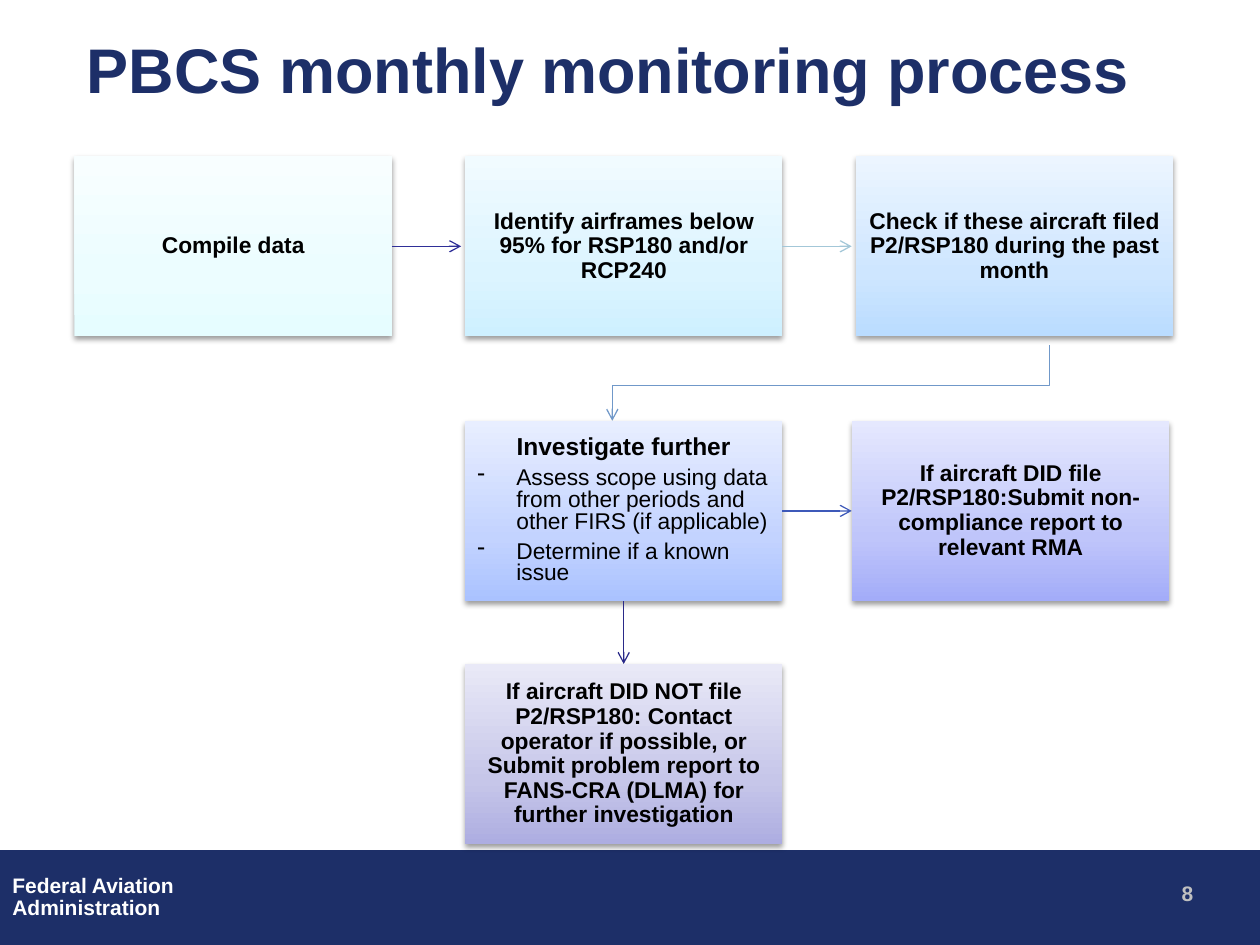
from lxml import etree
from pptx import Presentation
from pptx.dml.color import RGBColor
from pptx.enum.shapes import MSO_CONNECTOR, MSO_SHAPE
from pptx.enum.text import MSO_ANCHOR, MSO_AUTO_SIZE, PP_ALIGN
from pptx.oxml import parse_xml
from pptx.oxml.ns import nsdecls, qn
from pptx.util import Inches, Pt

RECTANGLE, STRAIGHT = MSO_SHAPE.RECTANGLE, MSO_CONNECTOR.STRAIGHT
LEFT, CENTER = PP_ALIGN.LEFT, PP_ALIGN.CENTER
MIDDLE, NO_FIT = MSO_ANCHOR.MIDDLE, MSO_AUTO_SIZE.NONE
BOTTOM_SIDE, LEFT_SIDE, RIGHT_SIDE, TOP_SIDE = 2, 1, 3, 0

NAVY = RGBColor(0x1D, 0x2F, 0x68)
WHITE = RGBColor(0xFF, 0xFF, 0xFF)
BLACK = RGBColor(0, 0, 0)
SILVER = RGBColor(0xC0, 0xC0, 0xC0)
COMPILE_ARROW = RGBColor(0x2F, 0x2F, 0x98)
IDENTIFY_ARROW = RGBColor(0xA3, 0xC7, 0xD8)
CHECK_ARROW = RGBColor(0x70, 0x98, 0xC9)
FILED_ARROW = RGBColor(0x3D, 0x59, 0xB9)
NOT_FILED_ARROW = RGBColor(0x2A, 0x2A, 0x89)

BOX_WIDTH, BOX_HEIGHT = 2.52, 1.43
ROW_TOPS = (1.24, 3.34, 5.27)
MIDDLE_COLUMN = 3.69
STEPS = {
    "compile": (0.59, ROW_TOPS[0], ("E6FDFF", "ECFDFF", "F8FEFF"), "Compile data"),
    "identify": (MIDDLE_COLUMN, ROW_TOPS[0], ("CEF0FF", "DCF4FF", "F1FBFF"),
                 "Identify airframes below 95% for RSP180 and/or RCP240"),
    "check": (6.79, ROW_TOPS[0], ("BADCFF", "CEE6FF", "ECF5FF"),
              "Check if these aircraft filed P2/RSP180 during the past month"),
    "investigate": (MIDDLE_COLUMN, ROW_TOPS[1], ("AAC2FF", "C3D3FF", "E8EEFF"), None),
    "filed": (6.76, ROW_TOPS[1], ("A3ACF9", "BFC5FA", "E5E8FE"),
              "If aircraft DID file P2/RSP180:Submit non-compliance report to relevant RMA"),
    "not filed": (MIDDLE_COLUMN, ROW_TOPS[2], ("ADADE1", "C6C6E9", "E9E9F7"),
                  "If aircraft DID NOT file P2/RSP180: Contact operator if possible, or "
                  "Submit problem report to FANS-CRA (DLMA) for further investigation"),
}
INVESTIGATION_TASKS = (
    "Assess scope using data from other periods and other FIRS (if applicable)",
    "Determine if a known issue",
)


def write(para, text, size, color, bold=True, align=LEFT, spacing=1.0):
    """Fill one paragraph with a single formatted run."""
    para.alignment = align
    para.line_spacing = spacing
    span = para.add_run()
    span.text = text
    font = span.font
    font.name, font.size, font.bold = "Arial", Pt(size), bold
    font.color.rgb = color


def add_bullet(para):
    """Give a paragraph a hanging dash."""
    properties = para._p.get_or_add_pPr()
    properties.set("marL", str(Inches(0.31)))
    properties.set("indent", str(-Inches(0.31)))
    etree.SubElement(properties, qn("a:buChar")).set("char", "-")


def fill_gradient(box, colors):
    """Shade a box upwards from its darkest colour."""
    box.fill.gradient()
    box.fill.gradient_angle = 90
    stops = box._element.spPr.find(qn("a:gradFill")).find(qn("a:gsLst"))
    for stop in list(stops):
        stops.remove(stop)
    for position, color in zip((0, 35000, 100000), colors):
        stops.append(parse_xml(
            f'<a:gs {nsdecls("a")} pos="{position}"><a:srgbClr val="{color}"/></a:gs>'))


def add_step(page, left, top, colors, text):
    """Place one shaded process box, with its text if it is a plain step."""
    box = page.shapes.add_shape(RECTANGLE, Inches(left), Inches(top),
                                Inches(BOX_WIDTH), Inches(BOX_HEIGHT))
    fill_gradient(box, colors)
    box.line.fill.background()
    box._element.spPr.append(parse_xml(
        f'<a:effectLst {nsdecls("a")}><a:outerShdw blurRad="40000" dist="20000" '
        'dir="5400000" rotWithShape="0"><a:srgbClr val="000000">'
        '<a:alpha val="38000"/></a:srgbClr></a:outerShdw></a:effectLst>'))
    frame = box.text_frame
    frame.word_wrap, frame.vertical_anchor = True, MIDDLE
    frame.margin_left = frame.margin_right = Inches(0.1)
    frame.margin_top = frame.margin_bottom = Inches(0.1)
    if text:
        write(frame.paragraphs[0], text, 13, BLACK, align=CENTER, spacing=0.9)
    return box


def add_investigation(box):
    """Write the heading and tasks of the investigation box."""
    frame = box.text_frame
    write(frame.paragraphs[0], "Investigate further", 14, BLACK, align=CENTER, spacing=0.8)
    for task in INVESTIGATION_TASKS:
        para = frame.add_paragraph()
        add_bullet(para)
        write(para, task, 13, BLACK, bold=False, spacing=0.8)
    for para in frame.paragraphs:
        para.space_after = Pt(4.55)


def style_arrow(arrow, color):
    """Format a line with an open arrowhead at its end."""
    arrow.line.color.rgb = color
    arrow.line.width = Pt(0.75)
    etree.SubElement(arrow.line._get_or_add_ln(), qn("a:tailEnd")).set("type", "arrow")


def add_arrow(page, start, start_side, end, color, target=None, target_side=None):
    """Draw a straight arrow from a box, joined to a target box if given."""
    origin = Inches(0)
    arrow = page.shapes.add_connector(STRAIGHT, origin, origin, *map(Inches, end))
    arrow.begin_connect(start, start_side)
    if target is not None:
        arrow.end_connect(target, target_side)
    else:
        arrow.end_y = arrow.begin_y
    style_arrow(arrow, color)
    etree.SubElement(arrow._element.spPr, qn("a:effectLst"))


def add_bent_arrow(page, points, color):
    """Draw an arrow that turns at each inner point."""
    corners = [(Inches(x), Inches(y)) for x, y in points]
    builder = page.shapes.build_freeform(*corners[0])
    builder.add_line_segments(corners[1:], close=False)
    arrow = builder.convert_to_shape()
    arrow.fill.background()
    style_arrow(arrow, color)
    arrow.shadow.inherit = False


def add_title(page, left, top, width, height):
    """Place and format the title."""
    title = page.shapes.title
    title.left, title.top = Inches(left), Inches(top)
    title.width, title.height = Inches(width), Inches(height)
    frame = title.text_frame
    frame.auto_size, frame.vertical_anchor = NO_FIT, MIDDLE
    write(frame.paragraphs[0], "PBCS monthly monitoring process", 36, NAVY)


def add_footer(page, top, height):
    """Draw the footer band with the agency name and page number."""
    band = page.shapes.add_shape(RECTANGLE, Inches(0), Inches(top), Inches(10), Inches(height))
    band.fill.solid()
    band.fill.fore_color.rgb = band.line.color.rgb = NAVY
    band.line.width = Pt(0.75)
    band.shadow.inherit = False
    agency = page.shapes.add_textbox(Inches(0), Inches(top + 0.16), Inches(1.5), Inches(0.44))
    frame = agency.text_frame
    frame.word_wrap = False
    write(frame.paragraphs[0], "Federal Aviation", 12, WHITE, spacing=0.85)
    write(frame.add_paragraph(), "Administration", 12, WHITE, spacing=0.85)
    number = page.shapes.add_textbox(Inches(9.28), Inches(top + 0.19), Inches(0.6), Inches(0.3))
    number.text_frame.word_wrap = True
    write(number.text_frame.paragraphs[0], "8", 12, SILVER)


def add_process(page):
    """Place the process boxes and the arrows between them."""
    boxes = {name: add_step(page, *step) for name, step in STEPS.items()}
    add_investigation(boxes["investigate"])
    first_row_middle = ROW_TOPS[0] + BOX_HEIGHT / 2
    add_arrow(page, boxes["compile"], RIGHT_SIDE, (3.66, first_row_middle), COMPILE_ARROW)
    add_arrow(page, boxes["identify"], RIGHT_SIDE, (6.76, first_row_middle), IDENTIFY_ARROW)
    add_bent_arrow(page, ((8.33, 2.74), (8.33, 3.06), (4.86, 3.06), (4.86, ROW_TOPS[1])),
                   CHECK_ARROW)
    add_arrow(page, boxes["investigate"], RIGHT_SIDE, (0, 0), FILED_ARROW,
              boxes["filed"], LEFT_SIDE)
    add_arrow(page, boxes["investigate"], BOTTOM_SIDE, (0, 0), NOT_FILED_ARROW,
              boxes["not filed"], TOP_SIDE)


def main():
    """Build and save the deck."""
    deck = Presentation()
    deck.slide_width, deck.slide_height = Inches(10), Inches(7.5)
    page = deck.slides.add_slide(deck.slide_layouts[5])
    add_footer(page, 6.75, 0.75)
    add_title(page, 0.59, 0.21, 9.27, 0.67)
    add_process(page)
    deck.save("out.pptx")


if __name__ == "__main__":
    main()
